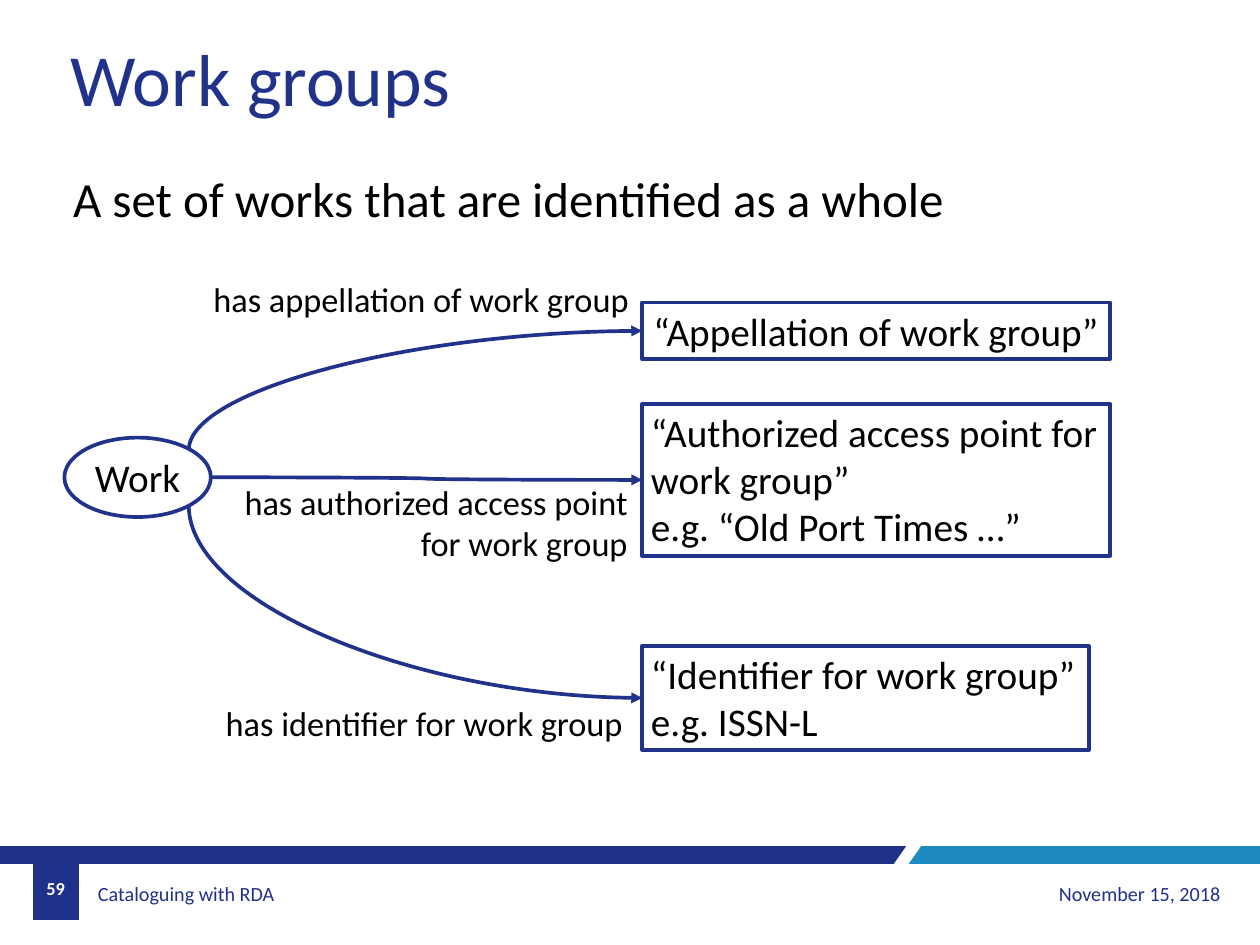
from lxml import etree
from pptx import Presentation
from pptx import util as u
from pptx.dml.color import RGBColor
from pptx.enum import shapes, text
from pptx.oxml.ns import qn

THEME = {
    "font": "Calibri",
    "navy": "203189", "ink": "21328A", "blue": "1D8BC1", "black": "000000", "white": "FFFFFF",
    "title": 60, "lead": 40, "node": 32, "label": 28, "footer": 16.4, "number": 14.9,
    "line": 3,
}
LEFT, CENTER, RIGHT = text.PP_ALIGN.LEFT, text.PP_ALIGN.CENTER, text.PP_ALIGN.RIGHT
RECTANGLE, OVAL = shapes.MSO_SHAPE.RECTANGLE, shapes.MSO_SHAPE.OVAL

SLIDE_SIZE = (14.28, 10.71)
BAND_TOP, BAND_BOTTOM, TAB_BOTTOM = 9.59, 9.79, 10.43
BANDS = [
    ("navy", [(0, BAND_TOP), (10.27, BAND_TOP), (10.13, BAND_BOTTOM), (0, BAND_BOTTOM)]),
    ("blue", [(10.44, BAND_TOP), (14.28, BAND_TOP), (14.28, BAND_BOTTOM), (10.3, BAND_BOTTOM)]),
    ("navy", [(0.37, BAND_TOP), (0.89, BAND_TOP), (0.89, TAB_BOTTOM), (0.37, TAB_BOTTOM)]),
]
FOOTERS = [
    ("Cataloguing with RDA", (1.04, 9.85, 5.52, 0.55), "footer", "navy", LEFT, 0.07),
    ("November 15, 2018", (10.27, 9.85, 3.66, 0.55), "footer", "navy", RIGHT, 0.1),
    ("59", (0.37, 9.79, 0.52, 0.55), "number", "white", CENTER, 0.1),
]
TEXTS = [
    ("Work groups", (0.7, 0.32, 4.55, 1.11), "title", "ink", LEFT),
    ("A set of works that are identified as a whole", (0.73, 1.86, 10.17, 0.77), "lead", "black", LEFT),
    ("has appellation of work group", (2.32, 3.1, 4.96, 0.57), "label", "black", LEFT),
    ("has authorized access point\nfor work group", (2.62, 5.4, 4.59, 1.04), "label", "black", RIGHT),
    ("has identifier for work group", (2.46, 7.91, 4.75, 0.57), "label", "black", LEFT),
]
WORK = ("Work", (0.73, 4.96, 1.66, 0.9))
BOX_LEFT = 7.28
TOP_RIGHT, MIDDLE_RIGHT, BOTTOM_RIGHT = (7, 2.14, 5.1), (6, 2.39, 5.41), (5, 2.14, 5.73)
VALUES = [
    ("“Appellation of work group”", 3.43, 5.3, 0.64, CENTER, False,
     "curvedConnector2", TOP_RIGHT),
    ("“Authorized access point for work group”\ne.g. “Old Port Times …”", 4.58, 5.3, 1.72, LEFT, True,
     "curvedConnector3", MIDDLE_RIGHT),
    ("“Identifier for work group”\ne.g. ISSN-L", 7.32, 5.06, 1.18, LEFT, False,
     "curvedConnector2", BOTTOM_RIGHT),
]


def color(name):
    return RGBColor.from_string(THEME[name])


def inches(values):
    return [u.Inches(value) for value in values]


def write(shape, words, size, ink, align, wrap=False):
    frame = shape.text_frame
    frame.text = words
    frame.word_wrap = wrap
    frame.vertical_anchor = text.MSO_ANCHOR.TOP
    for para in frame.paragraphs:
        para.alignment = align
        for span in para.runs:
            span.font.name = THEME["font"]
            span.font.size = u.Pt(THEME[size])
            span.font.color.rgb = color(ink)
    return frame


def add_text(page, words, place, size, ink, align, wrap=False):
    box = page.shapes.add_textbox(*inches(place))
    return write(box, words, size, ink, align, wrap)


def add_footer(page, words, place, size, ink, align, inset):
    frame = add_text(page, words, place, size, ink, align, True)
    frame.vertical_anchor = text.MSO_ANCHOR.MIDDLE
    frame.margin_left = frame.margin_right = u.Inches(inset)
    frame.paragraphs[0].runs[0].font.bold = size == "number"


def add_band(page, fill, points):
    corners = [tuple(inches(point)) for point in points]
    builder = page.shapes.build_freeform(*corners[0])
    builder.add_line_segments(corners[1:], close=True)
    band = builder.convert_to_shape()
    band.shadow.inherit = False
    band.fill.solid()
    band.fill.fore_color.rgb = color(fill)
    band.line.fill.background()


def add_node(page, kind, words, place, align, wrap=False):
    node = page.shapes.add_shape(kind, *inches(place))
    node.shadow.inherit = False
    node.fill.solid()
    node.fill.fore_color.rgb = color("white")
    node.line.color.rgb = color("ink")
    node.line.width = u.Pt(THEME["line"])
    write(node, words, "node", "black", align, wrap)
    return node


def add_curve(page, box, work, geometry, site, x, y):
    middle = box.top + box.height // 2
    curve = page.shapes.add_connector(
        shapes.MSO_CONNECTOR.CURVE, box.left, middle, u.Inches(x), u.Inches(y))
    curve.begin_connect(box, 1)
    curve.line.color.rgb = color("ink")
    curve.line.width = u.Pt(THEME["line"])
    element = curve._element
    joint = etree.SubElement(next(element.iter(qn("p:cNvCxnSpPr"))), qn("a:endCxn"))
    joint.set("id", str(work.shape_id))
    joint.set("idx", str(site))
    element.spPr.find(qn("a:prstGeom")).set("prst", geometry)
    arrow = etree.SubElement(element.spPr.find(qn("a:ln")), qn("a:headEnd"))
    arrow.set("type", "triangle")
    etree.SubElement(element.spPr, qn("a:effectLst"))


def main():
    deck = Presentation()
    deck.slide_width, deck.slide_height = inches(SLIDE_SIZE)
    page = deck.slides.add_slide(deck.slide_layouts[6])
    for band in BANDS:
        add_band(page, *band)
    for footer in FOOTERS:
        add_footer(page, *footer)
    work = add_node(page, OVAL, *WORK, CENTER)
    for words, top, width, height, align, wrap, geometry, joint in VALUES:
        box = add_node(page, RECTANGLE, words, (BOX_LEFT, top, width, height), align, wrap)
        add_curve(page, box, work, geometry, *joint)
    for item in TEXTS:
        add_text(page, *item)
    deck.save("out.pptx")


if __name__ == "__main__":
    main()
